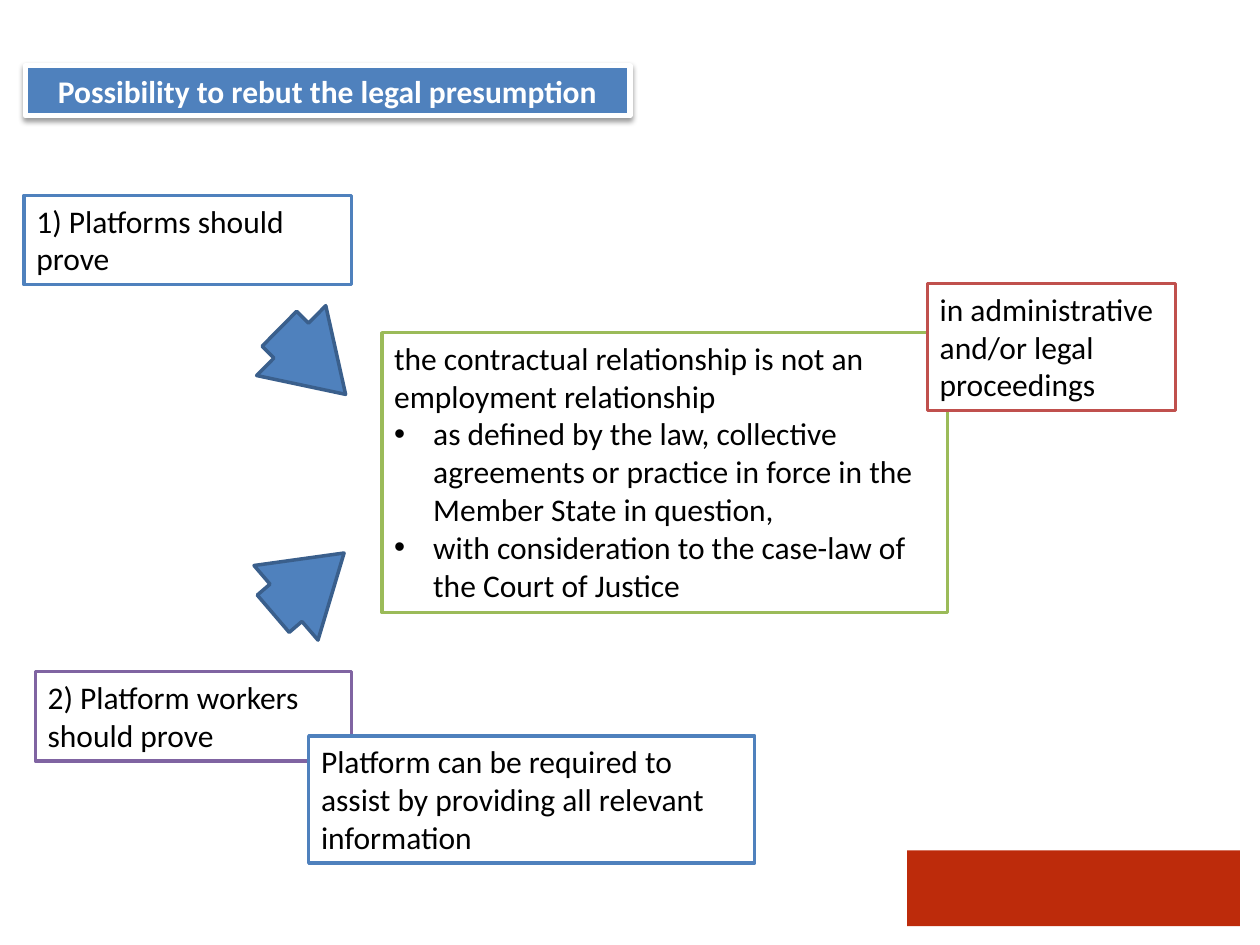
from dataclasses import dataclass

from lxml.etree import SubElement
from pptx import Presentation
from pptx.dml.color import RGBColor
from pptx.enum.shapes import MSO_SHAPE
from pptx.enum.text import MSO_ANCHOR, PP_ALIGN
from pptx.oxml.ns import qn
from pptx.shapes.autoshape import Shape
from pptx.slide import Slide
from pptx.util import Inches, Pt

WHITE = RGBColor(0xFF, 0xFF, 0xFF)
BLACK = RGBColor(0x00, 0x00, 0x00)
BLUE = RGBColor(0x4F, 0x81, 0xBD)
NAVY = RGBColor(0x3A, 0x5F, 0x8C)
GREEN = RGBColor(0x9B, 0xBB, 0x59)
RED = RGBColor(0xC0, 0x50, 0x4D)
PURPLE = RGBColor(0x80, 0x64, 0xA2)
BRICK = RGBColor(0xBD, 0x2B, 0x0B)


@dataclass
class Box:
    left: float
    top: float
    width: float
    height: float
    line: RGBColor
    text: str
    points: tuple[str, ...] = ()


@dataclass
class Arrow:
    left: float
    top: float
    turn: float


TITLE = Box(0.2, 0.52, 4.8, 0.4, WHITE, "Possibility to rebut the legal presumption")
BOXES = (
    Box(0.19, 1.55, 2.6, 0.71, BLUE, "1) Platforms should prove"),
    Box(3.03, 2.64, 4.49, 2.22, GREEN,
        "the contractual relationship is not an employment relationship",
        ("as defined by the law, collective agreements or practice in force "
         "in the Member State in question,",
         "with consideration to the case-law of the Court of Justice")),
    Box(7.36, 2.25, 1.97, 1.01, RED, "in administrative and/or legal proceedings"),
    Box(0.28, 5.33, 2.51, 0.71, PURPLE, "2) Platform workers should prove"),
    Box(2.45, 5.84, 3.54, 1.01, BLUE,
        "Platform can be required to assist by providing all relevant information"),
)
ARROWS = (Arrow(2.11, 2.48, 44.7), Arrow(2.08, 4.24, 319.4))


def add_form(slide: Slide, kind: MSO_SHAPE, left: float, top: float, width: float,
             height: float, fill: RGBColor, line: RGBColor | None = None) -> Shape:
    """Add a flat shape, without an outline if no line colour is given."""
    form = slide.shapes.add_shape(
        kind, Inches(left), Inches(top), Inches(width), Inches(height))
    form.shadow.inherit = False
    form.fill.solid()
    form.fill.fore_color.rgb = fill
    if line is None:
        form.line.fill.background()
    else:
        form.line.color.rgb = line
        form.line.width = Pt(2)
    return form


def add_bullet(para) -> None:
    props = para._p.get_or_add_pPr()
    props.set("marL", str(Inches(0.31)))
    props.set("indent", str(-Inches(0.31)))
    SubElement(props, qn("a:buFont"), typeface="Arial")
    SubElement(props, qn("a:buChar"), char="•")


def add_box(slide: Slide, box: Box, fill: RGBColor = WHITE, ink: RGBColor = BLACK,
            align: PP_ALIGN = PP_ALIGN.LEFT, bold: bool = False) -> Shape:
    form = add_form(slide, MSO_SHAPE.RECTANGLE, box.left, box.top,
                    box.width, box.height, fill, box.line)
    frame = form.text_frame
    frame.word_wrap = True
    frame.vertical_anchor = MSO_ANCHOR.TOP
    frame.text = "\n".join((box.text, *box.points))
    for spot, para in enumerate(frame.paragraphs):
        para.alignment = align
        if spot > 0:
            add_bullet(para)
        for run in para.runs:
            run.font.name = "Calibri"
            run.font.size = Pt(18)
            run.font.bold = bold
            run.font.color.rgb = ink
    return form


def add_shadow(form: Shape) -> None:
    """Cast a soft black shadow straight down."""
    effects = form._element.spPr.find(qn("a:effectLst"))
    shade = SubElement(effects, qn("a:outerShdw"), blurRad=str(Pt(3.1)),
                       dist=str(Pt(1.6)), dir="5400000", rotWithShape="0")
    tint = SubElement(shade, qn("a:srgbClr"), val=str(BLACK))
    SubElement(tint, qn("a:alpha"), val="38000")


def add_arrow(slide: Slide, arrow: Arrow) -> None:
    form = add_form(slide, MSO_SHAPE.RIGHT_ARROW, arrow.left, arrow.top,
                    0.74, 0.78, BLUE, NAVY)
    form.adjustments[0] = 0.5
    form.adjustments[1] = 0.82
    form.rotation = arrow.turn


def main() -> None:
    deck = Presentation()
    deck.slide_width = Inches(10)
    deck.slide_height = Inches(7.5)
    slide = deck.slides.add_slide(deck.slide_layouts[6])

    add_form(slide, MSO_SHAPE.RECTANGLE, 7.2, 6.75, 2.64, 0.6, BRICK)
    title = add_box(slide, TITLE, BLUE, WHITE, PP_ALIGN.CENTER, True)
    title.line.width = Pt(3)
    add_shadow(title)
    for box in BOXES:
        add_box(slide, box)
    for arrow in ARROWS:
        add_arrow(slide, arrow)

    deck.save("out.pptx")


if __name__ == "__main__":
    main()
